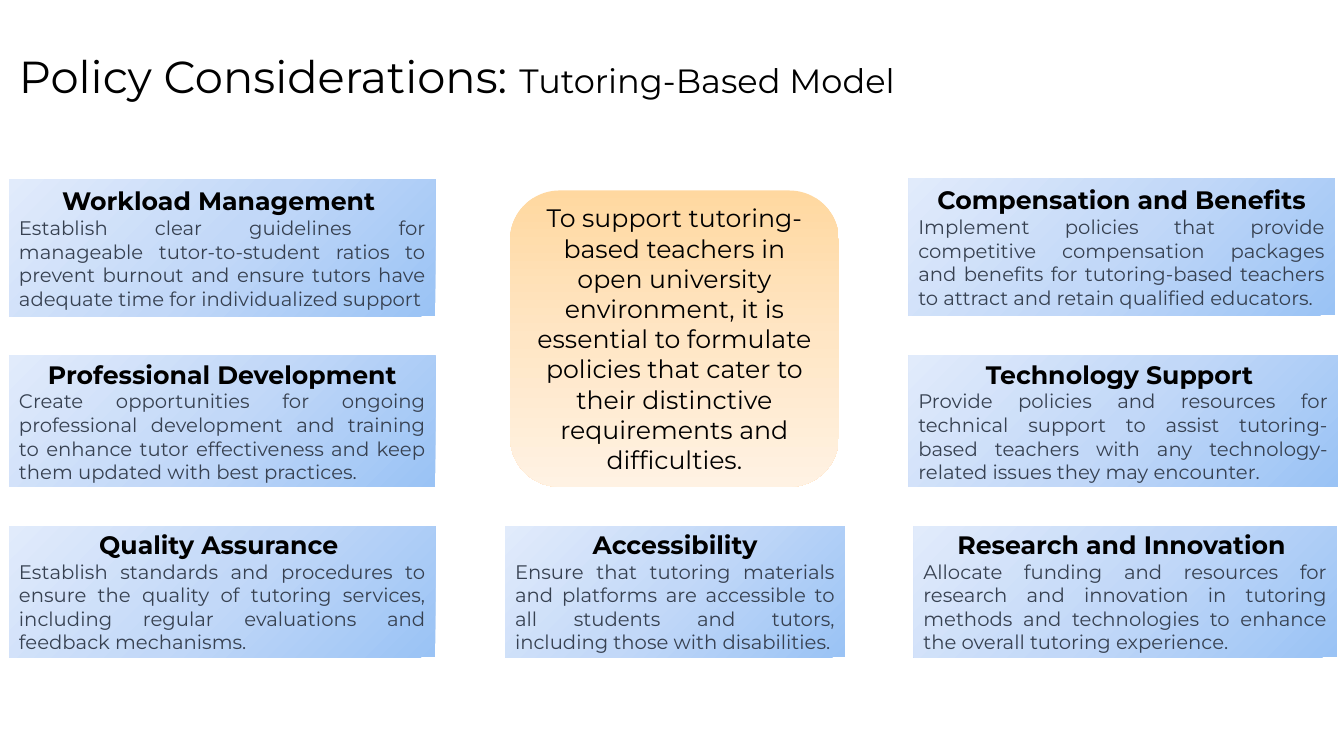
from copy import deepcopy

from pptx import Presentation
from pptx.dml.color import RGBColor
from pptx.enum.shapes import MSO_SHAPE
from pptx.enum.text import MSO_ANCHOR, PP_ALIGN
from pptx.oxml.ns import qn
from pptx.util import Inches, Pt

BLUE = ["9AC3F5", "C2D8F8", "E1EBFB"]
ORANGE = ["FFD8A0", "FFE6C5", "FFF2E3"]
BLACK = "000000"
SLATE = "374151"

LEFT, MIDDLE, RIGHT = 0.09, 5.01, 9.01
TOP_ROW, SECOND_ROW, THIRD_ROW = 1.78, 3.53, 5.22
CARD_WIDTH, CARD_HEIGHT, TALL_HEIGHT = 4.23, 1.3, 1.36

POLICIES = [
    (LEFT, TOP_ROW, CARD_WIDTH, TALL_HEIGHT, "Workload Management ",
     "Establish clear guidelines for manageable tutor-to-student ratios to prevent "
     "burnout and ensure tutors have adequate time for individualized support"),
    (LEFT, SECOND_ROW, CARD_WIDTH, CARD_HEIGHT, "Professional Development",
     "Create opportunities for ongoing professional development and training to "
     "enhance tutor effectiveness and keep them updated with best practices."),
    (LEFT, THIRD_ROW, CARD_WIDTH, CARD_HEIGHT, "Quality Assurance ",
     "Establish standards and procedures to ensure the quality of tutoring services, "
     "including regular evaluations and feedback mechanisms."),
    (MIDDLE, THIRD_ROW, 3.37, CARD_HEIGHT, "Accessibility",
     "Ensure that tutoring materials and platforms are accessible to all students "
     "and tutors, including those with disabilities."),
    (RIGHT, TOP_ROW - 0.01, CARD_WIDTH, TALL_HEIGHT, "Compensation and Benefits",
     "Implement policies that provide competitive compensation packages and benefits "
     "for tutoring-based teachers to attract and retain qualified educators."),
    (RIGHT, SECOND_ROW, 4.26, CARD_HEIGHT, "Technology Support ",
     "Provide policies and resources for technical support to assist tutoring-based "
     "teachers with any technology-related issues they may encounter."),
    (RIGHT + 0.05, THIRD_ROW, 4.2, CARD_HEIGHT, "Research and Innovation ",
     "Allocate funding and resources for research and innovation in tutoring methods "
     "and technologies to enhance the overall tutoring experience."),
]


def color(value):
    return RGBColor.from_string(value)


class SlideBuilder:
    font_name = "Montserrat"

    def __init__(self, page):
        self.page = page

    def span(self, para, text, size, ink=BLACK, bold=False):
        span = para.add_run()
        span.text = text
        span.font.name = self.font_name
        span.font.size = Pt(size)
        span.font.bold = bold
        span.font.color.rgb = color(ink)

    def frame(self, shape):
        frame = shape.text_frame
        frame.word_wrap = True
        frame.vertical_anchor = MSO_ANCHOR.MIDDLE
        return frame

    def title(self, bounds, main, detail):
        box = self.page.shapes.add_textbox(*map(Inches, bounds))
        para = self.frame(box).paragraphs[0]
        para.line_spacing = 0.9
        self.span(para, main, 32)
        self.span(para, detail, 24)

    def panel(self, preset, bounds, stops, angle):
        shape = self.page.shapes.add_shape(preset, *map(Inches, bounds))
        shape.shadow.inherit = False
        shape.line.fill.background()
        shape.fill.gradient()
        shape.fill.gradient_angle = angle
        stop_list = next(shape.element.iter(qn("a:gsLst")))
        stop_list.insert(1, deepcopy(stop_list[0]))
        for index, stop in enumerate(shape.fill.gradient_stops):
            stop.position = index / (len(stops) - 1)
            stop.color.rgb = color(stops[index])
        return self.frame(shape)

    def card(self, bounds, heading, body):
        frame = self.panel(MSO_SHAPE.RECTANGLE, bounds, BLUE, 135)
        para = frame.paragraphs[0]
        para.alignment = PP_ALIGN.CENTER
        self.span(para, heading, 18, bold=True)
        para = frame.add_paragraph()
        para.alignment = PP_ALIGN.JUSTIFY
        self.span(para, body, 14, SLATE)

    def summary(self, bounds, text):
        frame = self.panel(MSO_SHAPE.ROUNDED_RECTANGLE, bounds, ORANGE, 270)
        para = frame.paragraphs[0]
        para.alignment = PP_ALIGN.CENTER
        self.span(para, text, 18)


def main():
    deck = Presentation()
    deck.slide_width, deck.slide_height = Inches(13.33), Inches(7.5)
    builder = SlideBuilder(deck.slides.add_slide(deck.slide_layouts[6]))
    builder.title((LEFT, 0.06, 11.5, 1.45), "Policy Considerations: ", "Tutoring-Based Model")
    for *bounds, heading, body in POLICIES:
        builder.card(bounds, heading, body)
    builder.summary(
        (5.06, 1.89, 3.26, 2.94),
        "To support tutoring-based teachers in open university environment, it is essential "
        "to formulate policies that cater to their distinctive requirements and difficulties.",
    )
    deck.save("out.pptx")


if __name__ == "__main__":
    main()
